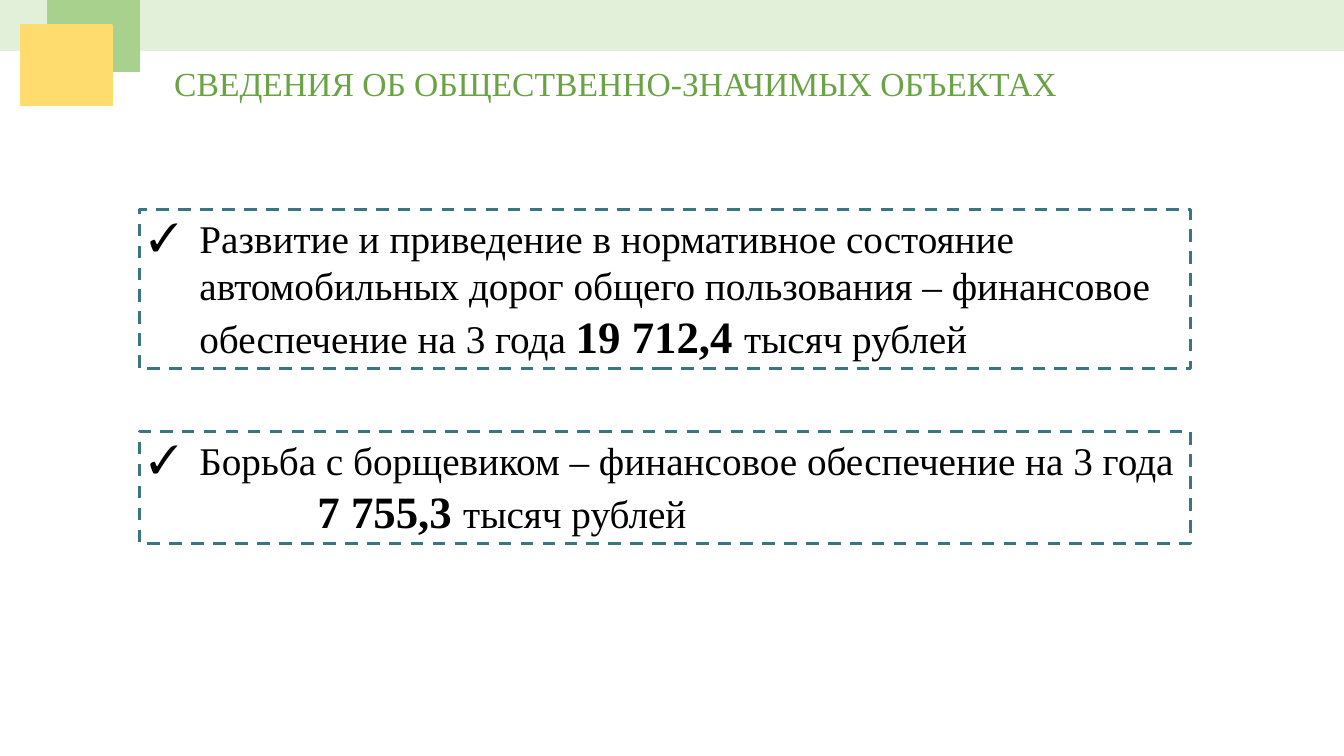
from dataclasses import dataclass

from lxml import etree
from pptx import Presentation
from pptx import util as u
from pptx.dml.color import RGBColor
from pptx.enum import dml, shapes, text
from pptx.oxml import ns


@dataclass(frozen=True)
class Theme:
    font: str = "Times New Roman"
    title: RGBColor = RGBColor(0x6A, 0xA3, 0x43)
    body: RGBColor = RGBColor(0, 0, 0)
    band: RGBColor = RGBColor(0xE2, 0xF0, 0xD9)
    green: RGBColor = RGBColor(0xA9, 0xD1, 0x8E)
    yellow: RGBColor = RGBColor(0xFF, 0xDC, 0x6D)
    frame: RGBColor = RGBColor(0x3A, 0x76, 0x82)
    title_size: int = 24
    body_size: int = 28
    amount_size: int = 32


THEME = Theme()
HANGING = 0.5


def add_run(paragraph, wording, size, color, bold=False):
    run = paragraph.add_run()
    run.text = wording
    run.font.name = THEME.font
    run.font.size = u.Pt(size)
    run.font.bold = bold
    run.font.color.rgb = color


def add_rectangle(slide, box, line, width, fill=None):
    shape = slide.shapes.add_shape(
        shapes.MSO_SHAPE.RECTANGLE, *map(u.Inches, box))
    shape.shadow.inherit = False
    if fill is None:
        shape.fill.background()
    else:
        shape.fill.solid()
        shape.fill.fore_color.rgb = fill
    shape.line.color.rgb = line
    shape.line.width = u.Pt(width)
    return shape


def set_indent(paragraph, left, bullet=None):
    """Indent a paragraph, with a hanging bullet if one is given."""
    properties = paragraph._p.get_or_add_pPr()
    properties.set("marL", str(u.Inches(left)))
    properties.set("indent", str(u.Inches(-HANGING if bullet else 0)))
    if bullet:
        font = etree.SubElement(properties, ns.qn("a:buFont"))
        font.set("typeface", THEME.font)
        etree.SubElement(properties, ns.qn("a:buChar")).set("char", bullet)
    else:
        etree.SubElement(properties, ns.qn("a:buNone"))


def add_header(slide, left, top, width):
    # Band across the top with two overlapping squares
    blocks = [
        ((0, 0, width, 0.5), THEME.band),
        ((0.47, 0, 0.91, 0.71), THEME.green),
        ((0.21, 0.25, 0.9, 0.8), THEME.yellow),
    ]
    for (x, y, block_width, height), color in blocks:
        add_rectangle(slide, (left + x, top + y, block_width, height),
                      color, 1, color)


def add_title(slide, box, wording):
    shape = slide.shapes.add_textbox(*map(u.Inches, box))
    frame = shape.text_frame
    frame.word_wrap = True
    frame.auto_size = text.MSO_AUTO_SIZE.SHAPE_TO_FIT_TEXT
    add_run(frame.paragraphs[0], wording, THEME.title_size, THEME.title)


def add_object_box(slide, box, description, amount, unit, amount_indent=None):
    """Dashed box; amount_indent puts the amount on its own indented line."""
    shape = add_rectangle(slide, box, THEME.frame, 2.25)
    shape.line.dash_style = dml.MSO_LINE.DASH
    frame = shape.text_frame
    frame.word_wrap = True
    frame.auto_size = text.MSO_AUTO_SIZE.SHAPE_TO_FIT_TEXT
    frame.vertical_anchor = text.MSO_ANCHOR.TOP

    # Description
    paragraph = frame.paragraphs[0]
    paragraph.alignment = text.PP_ALIGN.LEFT
    set_indent(paragraph, HANGING, "✓")
    add_run(paragraph, description, THEME.body_size, THEME.body)

    # Amount
    if amount_indent is not None:
        paragraph = frame.add_paragraph()
        paragraph.alignment = text.PP_ALIGN.LEFT
        set_indent(paragraph, amount_indent)
    add_run(paragraph, amount, THEME.amount_size, THEME.body, bold=True)
    add_run(paragraph, unit, THEME.body_size, THEME.body)


def main():
    presentation = Presentation()
    presentation.slide_width = u.Inches(13.33)
    presentation.slide_height = u.Inches(7.5)
    slide = presentation.slides.add_slide(presentation.slide_layouts[6])

    add_title(slide, (1.63, 0.58, 11.6, 0.5),
              "СВЕДЕНИЯ ОБ ОБЩЕСТВЕННО-ЗНАЧИМЫХ ОБЪЕКТАХ")
    add_header(slide, 0, 0, 13.33)

    # Objects and their funding
    unit = "тысяч рублей"
    add_object_box(
        slide, (1.38, 2.08, 10.43, 1.58),
        "Развитие и приведение в нормативное состояние автомобильных дорог "
        "общего пользования – финансовое обеспечение на 3 года ",
        "19 712,4 ", unit)
    add_object_box(
        slide, (1.38, 4.28, 10.43, 1.11),
        "Борьба с борщевиком – финансовое обеспечение на 3 года",
        "7 755,3 ", unit, amount_indent=1.67)

    presentation.save("out.pptx")


if __name__ == "__main__":
    main()
